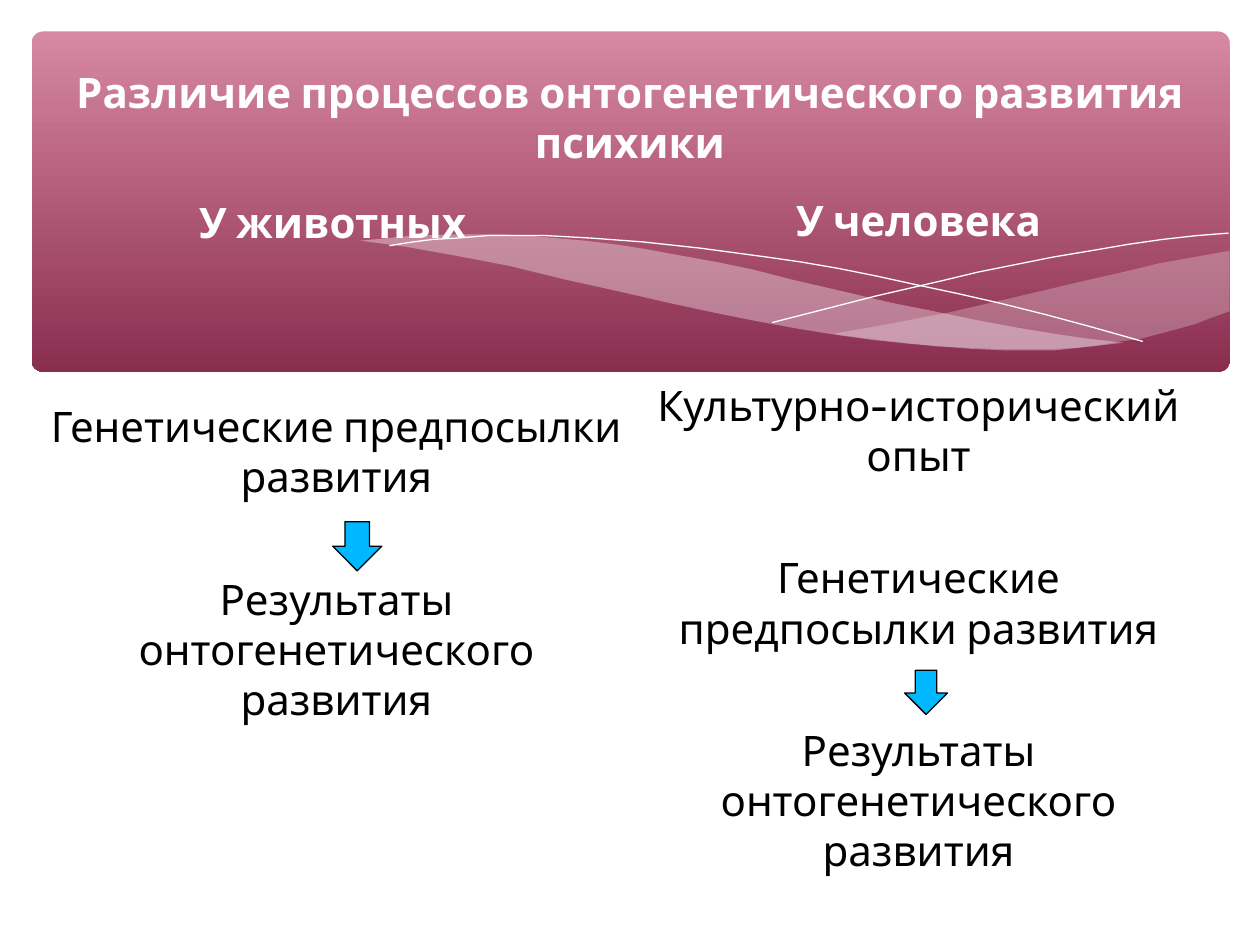
from lxml.etree import SubElement
from pptx import Presentation
from pptx.dml.color import RGBColor
from pptx.enum.shapes import MSO_SHAPE
from pptx.enum.text import MSO_ANCHOR, MSO_AUTO_SIZE, PP_ALIGN
from pptx.oxml.ns import qn
from pptx.util import Inches, Pt

WHITE = RGBColor(0xFF, 0xFF, 0xFF)
BLACK = RGBColor(0x00, 0x00, 0x00)
ROSE = RGBColor(0xD7, 0x88, 0xA3)
WINE = RGBColor(0x8A, 0x2E, 0x4E)
BLUSH = RGBColor(0xF4, 0xE7, 0xED)
BLUE = RGBColor(0x00, 0xB8, 0xFF)

RIGHT_WAVE = [
    (9.76, 1.99), (9.48, 2.04), (9.2, 2.09), (8.91, 2.16), (8.6, 2.23),
    (8.05, 2.36), (7.53, 2.48), (7.06, 2.57), (6.61, 2.65), (6.91, 2.69),
    (7.18, 2.72), (7.44, 2.75), (7.69, 2.76), (7.92, 2.77), (8.34, 2.77),
    (8.54, 2.76), (8.72, 2.74), (8.89, 2.71), (9.05, 2.69), (9.2, 2.65),
    (9.35, 2.61), (9.49, 2.57), (9.62, 2.52), (9.76, 2.47)]
LEFT_WAVE = [
    (8.92, 2.72), (8.65, 2.69), (8.37, 2.65), (8.07, 2.6), (7.75, 2.54),
    (7.41, 2.47), (7.06, 2.4), (6.68, 2.31), (6.29, 2.22), (5.98, 2.14),
    (5.69, 2.08), (5.41, 2.03), (5.14, 1.98), (4.89, 1.94), (4.64, 1.91),
    (4.41, 1.89), (4.2, 1.87), (3.99, 1.86), (3.61, 1.86), (3.28, 1.87),
    (2.86, 1.91), (3.23, 1.96), (3.62, 2.03), (4.04, 2.11), (4.49, 2.22),
    (4.9, 2.31), (5.29, 2.4), (5.66, 2.48), (6.01, 2.55), (6.34, 2.61),
    (6.65, 2.66), (6.94, 2.7), (7.22, 2.73), (7.48, 2.75), (7.72, 2.77),
    (7.96, 2.78), (8.38, 2.78), (8.57, 2.76), (8.75, 2.74)]
FALL = [
    (3.09, 1.95), (3.28, 1.92), (3.44, 1.9), (3.63, 1.89), (3.87, 1.87),
    (4.33, 1.87), (4.69, 1.89), (5.1, 1.92), (5.56, 1.97), (6.08, 2.04),
    (6.36, 2.08), (6.65, 2.13), (6.95, 2.19), (7.27, 2.26), (7.6, 2.33),
    (7.95, 2.41), (8.31, 2.5), (8.68, 2.6), (9.07, 2.71)]
RISE = [
    (6.13, 2.56), (6.52, 2.46), (6.95, 2.35), (7.47, 2.23), (7.76, 2.16),
    (8.06, 2.1), (8.36, 2.04), (8.66, 1.99), (8.95, 1.94), (9.23, 1.9),
    (9.5, 1.87), (9.75, 1.85)]


def write(frame, *texts, color=BLACK, bold=False, gap=0, anchor=MSO_ANCHOR.TOP):
    """Fill a text frame with centred paragraphs."""
    frame.word_wrap = True
    frame.auto_size = MSO_AUTO_SIZE.NONE
    frame.vertical_anchor = anchor
    for i, text in enumerate(texts):
        para = frame.add_paragraph() if i else frame.paragraphs[0]
        para.alignment = PP_ALIGN.CENTER
        para.space_before = Pt(gap if i else 0)
        run = para.add_run()
        run.text = text
        font = run.font
        font.name, font.size, font.bold = "Cabin", Pt(24), bold
        font.color.rgb = color


class Deck:
    def __init__(self):
        self.prs = Presentation()
        self.prs.slide_width, self.prs.slide_height = Inches(10), Inches(7.5)
        self.slide = self.prs.slides.add_slide(self.prs.slide_layouts[5])
        self.shapes = self.slide.shapes

    def title(self, text, *box):
        head = self.shapes.title
        head.left, head.top, head.width, head.height = map(Inches, box)
        write(head.text_frame, text, color=WHITE, bold=True,
              anchor=MSO_ANCHOR.MIDDLE)
        self.shapes._spTree.append(head._element)

    def text(self, box, *texts, **style):
        area = self.shapes.add_textbox(*map(Inches, box))
        write(area.text_frame, *texts, **style)

    def panel(self, *box):
        panel = self.shapes.add_shape(MSO_SHAPE.ROUNDED_RECTANGLE,
                                      *map(Inches, box))
        panel.adjustments[0] = 0.034
        panel.shadow.inherit = False
        panel.line.fill.background()
        panel.fill.gradient()
        panel.fill.gradient_angle = 270
        for stop, color, place in zip(panel.fill.gradient_stops,
                                      (ROSE, WINE), (0, 1)):
            stop.color.rgb, stop.position = color, place

    def trace(self, points, close):
        first, *rest = [(Inches(x), Inches(y)) for x, y in points]
        pen = self.shapes.build_freeform(*first)
        pen.add_line_segments(rest, close=close)
        shape = pen.convert_to_shape()
        shape.shadow.inherit = False
        return shape

    def wave(self, points, alpha):
        wave = self.trace(points, True)
        wave.line.fill.background()
        wave.fill.solid()
        wave.fill.fore_color.rgb = BLUSH
        tint = wave._element.spPr.find(".//" + qn("a:srgbClr"))
        SubElement(tint, qn("a:alpha"), val=str(alpha * 1000))

    def curve(self, points):
        curve = self.trace(points, False)
        curve.fill.background()
        curve.line.color.rgb, curve.line.width = WHITE, Pt(0.75)

    def arrow(self, *box):
        arrow = self.shapes.add_shape(MSO_SHAPE.DOWN_ARROW, *map(Inches, box))
        arrow.shadow.inherit = False
        arrow.fill.solid()
        arrow.fill.fore_color.rgb = BLUE
        arrow.line.color.rgb, arrow.line.width = BLACK, Pt(0.75)


def main():
    deck = Deck()
    deck.panel(0.25, 0.25, 9.51, 2.7)
    deck.wave(RIGHT_WAVE, 29)
    deck.wave(LEFT_WAVE, 40)
    deck.curve(FALL)
    deck.curve(RISE)
    deck.title("Различие процессов онтогенетического развития психики",
               0.5, 0.3, 9, 1.25)
    heads = {"color": WHITE, "bold": True, "anchor": MSO_ANCHOR.MIDDLE}
    deck.text((0.43, 1.51, 4.42, 0.5), "У животных", **heads)
    deck.text((5.08, 1.49, 4.42, 0.5), "У человека", **heads)
    steps = ("Генетические предпосылки развития",
             "Результаты онтогенетического развития")
    deck.text((0.27, 3.13, 4.8, 3.57), *steps, gap=41)
    deck.text((5.08, 2.96, 4.42, 3.74), "Культурно-исторический опыт",
              *steps, gap=41)
    deck.arrow(7.18, 5.32, 0.34, 0.35)
    deck.arrow(2.64, 4.14, 0.39, 0.39)
    deck.prs.save("out.pptx")


if __name__ == "__main__":
    main()
